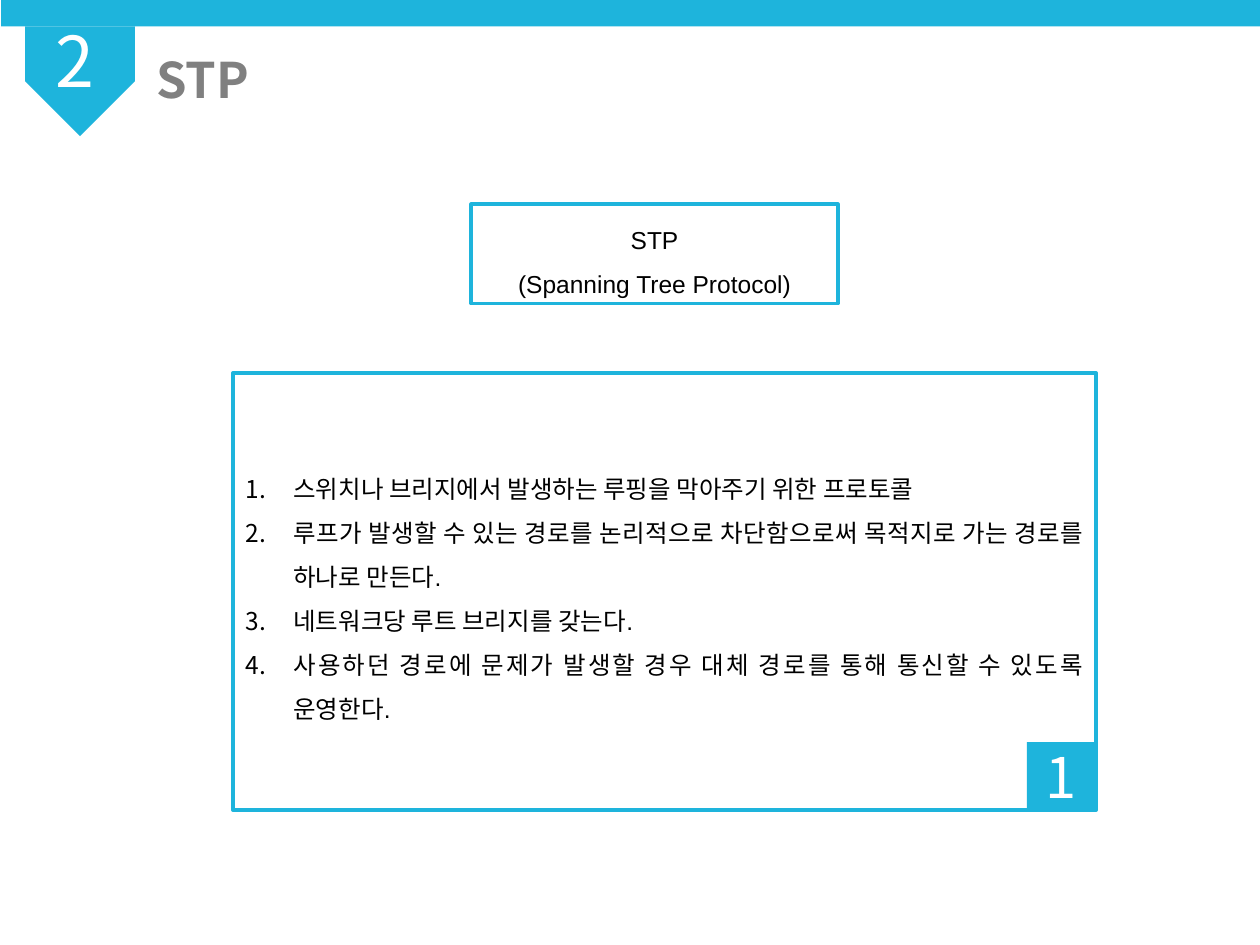
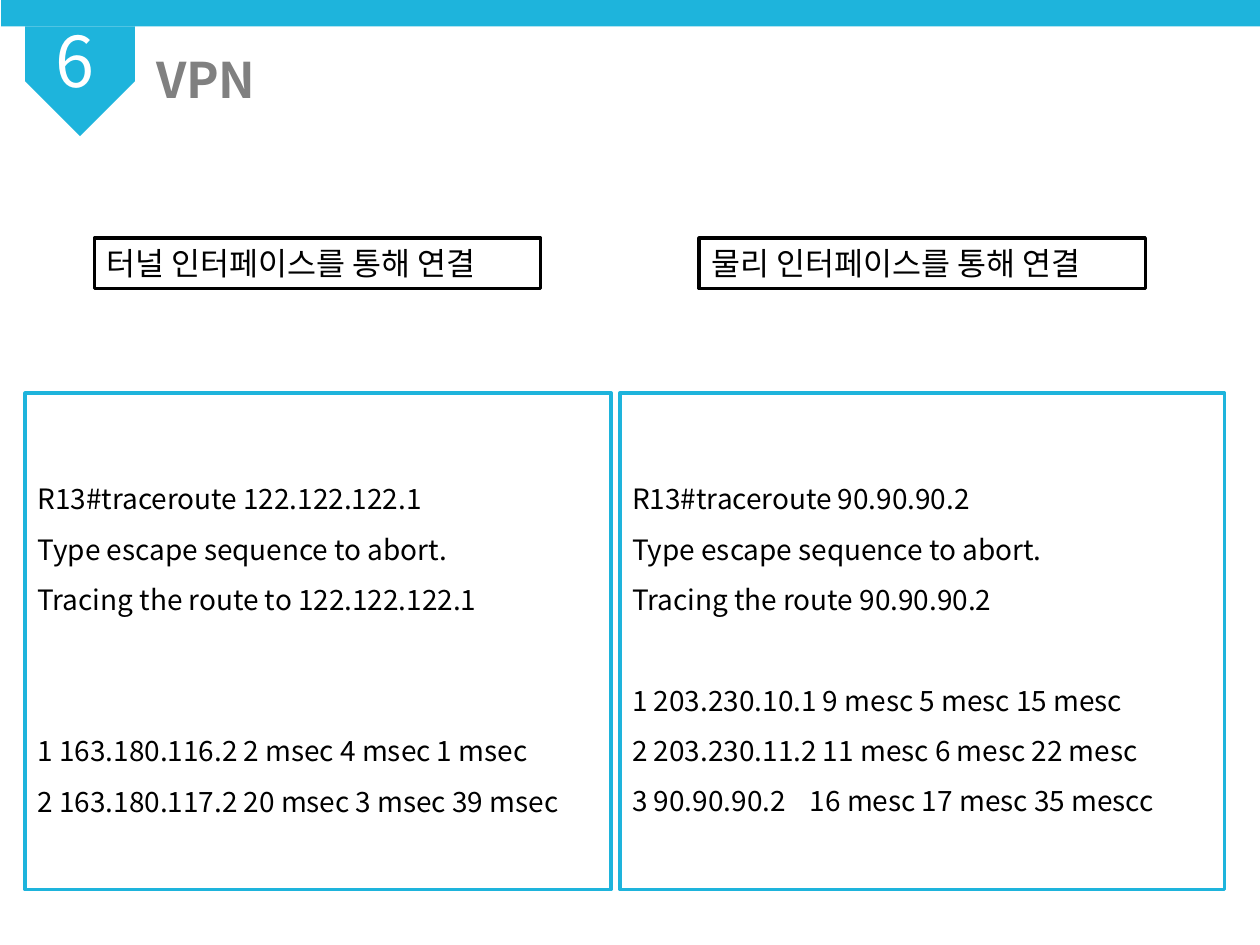
from dataclasses import dataclass

from lxml import etree
from pptx import Presentation
from pptx.dml.color import RGBColor
from pptx.enum.shapes import MSO_SHAPE
from pptx.enum.text import MSO_ANCHOR, PP_ALIGN
from pptx.oxml.ns import qn
from pptx.util import Inches, Pt

RECTANGLE, POINTER = MSO_SHAPE.RECTANGLE, MSO_SHAPE.SNIP_2_SAME_RECTANGLE
TOP, MIDDLE = MSO_ANCHOR.TOP, MSO_ANCHOR.MIDDLE
LEFT, CENTER, JUSTIFY = PP_ALIGN.LEFT, PP_ALIGN.CENTER, PP_ALIGN.JUSTIFY


@dataclass(frozen=True)
class Theme:
    accent: str = "1EB4DC"
    gray: str = "808080"
    black: str = "000000"
    white: str = "FFFFFF"
    sans: str = "Noto Sans CJK KR"
    latin: str = "Arial"
    chapter: int = 40
    index: int = 32
    title: int = 28
    label: int = 18
    trace: int = 16
    body: int = 14
    border: int = 2
    leading: float = 1.5


THEME = Theme()

# Content
STP = {
    "chapter": "2",
    "title": "STP",
    "term": ["STP", "(Spanning Tree Protocol)"],
    "points": [
        "스위치나 브리지에서 발생하는 루핑을 막아주기 위한 프로토콜",
        "루프가 발생할 수 있는 경로를 논리적으로 차단함으로써 목적지로 가는 경로를 하나로 만든다.",
        "네트워크당 루트 브리지를 갖는다.",
        "사용하던 경로에 문제가 발생할 경우 대체 경로를 통해 통신할 수 있도록 운영한다.",
    ],
    "index": "1",
}
VPN = {
    "chapter": "6",
    "title": "VPN",
    "routes": [
        {
            "label": "터널 인터페이스를 통해 연결",
            "command": ["R13#traceroute 122.122.122.1",
                        "Type escape sequence to abort.",
                        "Tracing the route to 122.122.122.1"],
            "hops": ["1 163.180.116.2 2 msec 4 msec 1 msec",
                     "2 163.180.117.2 20 msec 3 msec 39 msec"],
            "gap_lines": 2,
        },
        {
            "label": "물리 인터페이스를 통해 연결",
            "command": ["R13#traceroute 90.90.90.2",
                        "Type escape sequence to abort.",
                        "Tracing the route 90.90.90.2"],
            "hops": ["1 203.230.10.1 9 mesc 5 mesc 15 mesc",
                     "2 203.230.11.2 11 mesc 6 mesc 22 mesc",
                     "3 90.90.90.2\t16 mesc 17 mesc 35 mescc"],
            "gap_lines": 1,
        },
    ],
}

# Layout in inches: left, top, width, height
WIDTH, HEIGHT = 10, 7.5
BAND = 0.21
MARGIN = 0.2
POINTER_SIDE = 0.87
PANEL = (1.85, 2.96, 6.85, 3.47)
INDEX_SIZE = (0.55, 0.54)
TERM = (3.74, 1.62, 2.91, 0.79)
TRACE_TOP, TRACE_HEIGHT = 3.12, 3.94
TRACE_COLUMNS = [(MARGIN, 4.65), (4.92, 4.8)]
LABEL_LEFT, LABEL_STEP, LABEL_TOP = 0.75, 4.8, 1.89
LABEL_SIZE = (3.54, 0.4)
HANGING = 0.38
HOP_TAB = 1.41
TRACE_LINE = THEME.trace * 1.2 * THEME.leading  # height of one line, points


def color(code):
    return RGBColor.from_string(code)


def write(box, lines, size, ink=THEME.black, font=THEME.sans, bold=False,
          align=LEFT, anchor=TOP, leading=None, numbered=False, before=None, tab=None):
    """Fill a box with one paragraph per line; before maps a line to its space above."""
    frame = box.text_frame
    frame.word_wrap = True
    frame.vertical_anchor = anchor
    for number, line in enumerate(lines):
        para = frame.add_paragraph() if number else frame.paragraphs[0]
        para.alignment = align
        if leading:
            para.line_spacing = leading
        if before and number in before:
            para.space_before = Pt(before[number])
        properties = para._p.get_or_add_pPr()
        if numbered:
            properties.set("marL", str(Inches(HANGING)))
            properties.set("indent", str(-Inches(HANGING)))
            etree.SubElement(properties, qn("a:buFont"), typeface=THEME.sans)
            etree.SubElement(properties, qn("a:buAutoNum"), type="arabicPeriod")
        if tab and "\t" in line:
            stops = etree.SubElement(properties, qn("a:tabLst"))
            etree.SubElement(stops, qn("a:tab"), pos=str(Inches(tab)), algn="l")
        span = para.add_run()
        span.text = line
        span.font.size = Pt(size)
        span.font.bold = bold
        span.font.name = font
        span.font.color.rgb = color(ink)
        etree.SubElement(span._r.get_or_add_rPr(), qn("a:ea"), typeface=THEME.sans)


def add_box(page, place, fill=None, line=None, kind=RECTANGLE):
    box = page.shapes.add_shape(kind, *map(Inches, place))
    box.shadow.inherit = False
    if fill:
        box.fill.solid()
        box.fill.fore_color.rgb = color(fill)
    else:
        box.fill.background()
    if line:
        box.line.color.rgb = color(line)
        box.line.width = Pt(THEME.border)
    else:
        box.line.fill.background()
    return box


def add_text(page, place, text, size, **style):
    write(page.shapes.add_textbox(*map(Inches, place)), [text], size, **style)


def add_page(deck, content):
    """Blank page with the shared band, chapter pointer and title."""
    page = deck.slides.add_slide(deck.slide_layouts[6])
    add_text(page, (1.14, 0.34, 7, 0.74), content["title"], THEME.title,
             ink=THEME.gray, bold=True, before={0: THEME.title * 0.2})
    add_box(page, (0.01, 0, WIDTH, BAND), fill=THEME.accent)
    pointer = add_box(page, (MARGIN, BAND, POINTER_SIDE, POINTER_SIDE),
                      fill=THEME.accent, kind=POINTER)
    pointer.adjustments[0], pointer.adjustments[1] = 0.5, 0
    pointer.rotation = 180
    add_text(page, (0.34, 0.09, 0.68, 0.77), content["chapter"], THEME.chapter,
             ink=THEME.white)
    return page


def build_stp(deck):
    page = add_page(deck, STP)
    # Numbered points
    panel = add_box(page, PANEL, line=THEME.accent)
    write(panel, STP["points"], THEME.body, font=THEME.latin, align=JUSTIFY,
          anchor=MIDDLE, leading=THEME.leading, numbered=True)
    # Index tile in the panel's lower right corner
    left, top, width, height = PANEL
    tile_width, tile_height = INDEX_SIZE
    tile = add_box(page, (left + width - tile_width, top + height - tile_height,
                          tile_width, tile_height), fill=THEME.accent)
    write(tile, [STP["index"]], THEME.index, ink=THEME.white, align=CENTER, anchor=MIDDLE)
    # Term
    term = add_box(page, TERM, line=THEME.accent)
    write(term, STP["term"], THEME.body, font=THEME.latin, align=CENTER,
          anchor=MIDDLE, leading=THEME.leading)


def build_vpn(deck):
    page = add_page(deck, VPN)
    for column, (route, (left, width)) in enumerate(zip(VPN["routes"], TRACE_COLUMNS)):
        # Trace output, with a gap above the first hop
        trace = add_box(page, (left, TRACE_TOP, width, TRACE_HEIGHT), line=THEME.accent)
        write(trace, route["command"] + route["hops"], THEME.trace, anchor=MIDDLE,
              leading=THEME.leading, tab=HOP_TAB,
              before={len(route["command"]): route["gap_lines"] * TRACE_LINE})
        # Label above the trace
        label = add_box(page, (LABEL_LEFT + column * LABEL_STEP, LABEL_TOP, *LABEL_SIZE),
                        fill=THEME.white, line=THEME.black)
        write(label, [route["label"]], THEME.label)


def main():
    deck = Presentation()
    deck.slide_width, deck.slide_height = Inches(WIDTH), Inches(HEIGHT)
    build_stp(deck)
    build_vpn(deck)
    deck.save("out.pptx")


if __name__ == "__main__":
    main()
